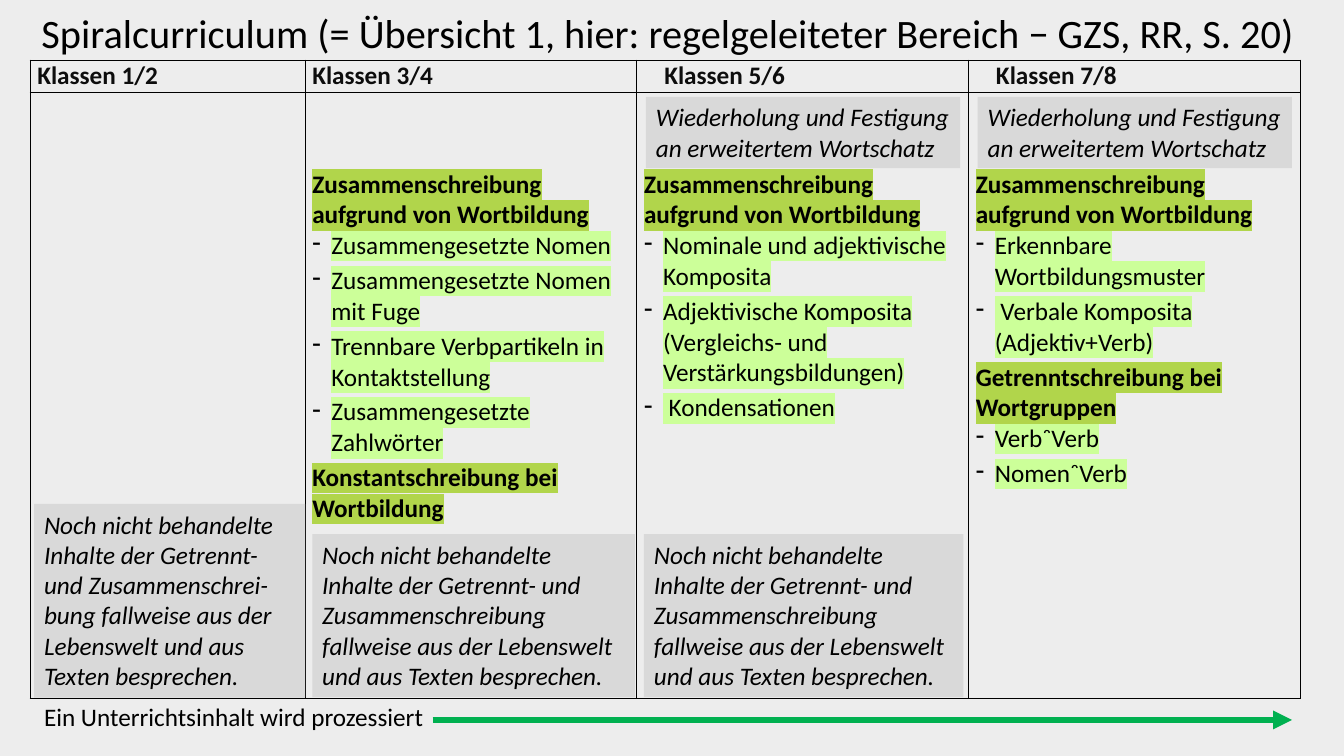
from dataclasses import dataclass

from lxml.etree import SubElement
from pptx import Presentation
from pptx.dml.color import RGBColor
from pptx.enum.shapes import MSO_CONNECTOR, MSO_SHAPE
from pptx.enum.text import MSO_ANCHOR, MSO_AUTO_SIZE, PP_ALIGN
from pptx.oxml.ns import qn
from pptx.util import Cm, Pt

FONT = "Calibri"
BLACK, HEADER_INK = "000000", "0D0D0D"
PAGE_GREY, NOTE_GREY = "EDEDED", "D9D9D9"
TOPIC_GREEN, ITEM_GREEN, ARROW_GREEN = "B1D54B", "CCFF99", "00B050"

TITLE = "Spiralcurriculum (= Übersicht 1, hier: regelgeleiteter Bereich − GZS, RR, S. 20)"
CAPTION = "Ein Unterrichtsinhalt wird prozessiert"
JOINING = "Zusammenschreibung aufgrund von Wortbildung"
REVIEW = "Wiederholung und Festigung an erweitertem Wortschatz"
PENDING = (
    "Noch nicht behandelte Inhalte der Getrennt- und {} "
    "fallweise aus der Lebenswelt und aus Texten besprechen."
)
PENDING_WIDE = PENDING.format("Zusammenschreibung")
PENDING_NARROW = PENDING.format("Zusammenschrei-bung")

PLAIN = {"size": Pt(18), "name": FONT, "bold": False, "italic": False}
BOLD = PLAIN | {"bold": True}
ITALIC = PLAIN | {"italic": True}
HEADING = PLAIN | {"size": Pt(28.8)}


@dataclass
class Topic:
    heading: str
    items: tuple[str, ...] = ()


@dataclass
class Column:
    header: str
    width: float
    header_indent: float = 0
    topics: tuple[Topic, ...] = ()


@dataclass
class Note:
    text: str
    left: float
    top: float
    width: float
    height: float


COLUMNS = (
    Column("Klassen 1/2", 6.93),
    Column("Klassen 3/4", 8.36, 0, (
        Topic(JOINING, (
            "Zusammengesetzte Nomen",
            "Zusammengesetzte Nomen mit Fuge",
            "Trennbare Verbpartikeln in Kontaktstellung",
            "Zusammengesetzte Zahlwörter",
        )),
        Topic("Konstantschreibung bei Wortbildung"),
    )),
    Column("Klassen 5/6", 8.36, 0.51, (
        Topic(JOINING, (
            "Nominale und adjektivische Komposita",
            "Adjektivische Komposita (Vergleichs- und Verstärkungsbildungen)",
            " Kondensationen",
        )),
    )),
    Column("Klassen 7/8", 8.36, 0.51, (
        Topic(JOINING, (
            "Erkennbare Wortbildungsmuster",
            " Verbale Komposita (Adjektiv+Verb)",
        )),
        Topic("Getrenntschreibung bei Wortgruppen", ("VerbᵔVerb", "NomenᵔVerb")),
    )),
)

NOTES = (
    Note(REVIEW, 24.64, 2.44, 7.92, 1.8),
    Note(PENDING_WIDE, 7.87, 13.46, 8.13, 4.11),
    Note(PENDING_NARROW, 0.86, 12.7, 6.83, 4.88),
    Note(PENDING_WIDE, 16.23, 13.46, 8.05, 4.11),
    Note(REVIEW, 16.28, 2.44, 7.92, 1.8),
)


def colour(value: str) -> RGBColor:
    return RGBColor.from_string(value)


def apply(target, values: dict) -> None:
    for name, value in values.items():
        setattr(target, name, value)


def paint(fill, value: str) -> None:
    fill.solid()
    fill.fore_color.rgb = colour(value)


def write(para, text: str, style: dict, ink: str = BLACK, marker: str = "") -> None:
    para.alignment = PP_ALIGN.LEFT
    span = para.add_run()
    span.text = text
    apply(span.font, style)
    span.font.color.rgb = colour(ink)
    if marker:
        properties = span.font._element
        highlight = SubElement(properties, qn("a:highlight"))
        SubElement(highlight, qn("a:srgbClr"), val=marker)
        properties.find(qn("a:solidFill")).addnext(highlight)


def add_dash(para) -> None:
    para.space_after = Pt(3)
    properties = para._p.get_or_add_pPr()
    properties.set("marL", str(Cm(0.48)))
    properties.set("indent", str(-Cm(0.48)))
    SubElement(properties, qn("a:buChar"), char="-")


def format_cell(cell, top: float) -> None:
    apply(cell, {
        "margin_left": Cm(0.18), "margin_right": Cm(0.18),
        "margin_top": Cm(top), "margin_bottom": 0,
    })
    cell.fill.background()
    properties = cell._tc.get_or_add_tcPr()
    for position, side in enumerate(("lnL", "lnR", "lnT", "lnB")):
        border = SubElement(properties, qn(f"a:{side}"), w=str(Pt(1)))
        fill = SubElement(border, qn("a:solidFill"))
        SubElement(fill, qn("a:srgbClr"), val=BLACK)
        properties.insert(position, border)


def fill_topics(cell, topics: tuple[Topic, ...]) -> None:
    frame = cell.text_frame
    for number, topic in enumerate(topics):
        para = frame.add_paragraph() if number else frame.paragraphs[0]
        write(para, topic.heading, BOLD, marker=TOPIC_GREEN)
        for item in topic.items:
            para = frame.add_paragraph()
            write(para, item, PLAIN, marker=ITEM_GREEN)
            add_dash(para)


def add_title(page) -> None:
    title = page.shapes.title
    apply(title, {"left": Cm(0.79), "top": Cm(-0.05), "width": Cm(32.31), "height": Cm(1.9)})
    apply(title.text_frame, {
        "word_wrap": True, "auto_size": MSO_AUTO_SIZE.NONE,
        "vertical_anchor": MSO_ANCHOR.MIDDLE,
    })
    para = title.text_frame.paragraphs[0]
    para.line_spacing = 0.9
    write(para, TITLE, HEADING)


def add_curriculum(page) -> None:
    width = sum(column.width for column in COLUMNS)
    table = page.shapes.add_table(
        2, len(COLUMNS), Cm(0.76), Cm(1.52), Cm(width), Cm(16.08)
    ).table
    apply(table, {"first_row": False, "horz_banding": False})
    for row, height in zip(table.rows, (0.81, 15.27)):
        row.height = Cm(height)
    for index, column in enumerate(COLUMNS):
        table.columns[index].width = Cm(column.width)
        header, body = table.cell(0, index), table.cell(1, index)
        format_cell(header, 0)
        format_cell(body, 1.93)
        para = header.text_frame.paragraphs[0]
        write(para, column.header, BOLD, HEADER_INK)
        para._p.get_or_add_pPr().set("marL", str(Cm(column.header_indent)))
        fill_topics(body, column.topics)


def add_note(page, note: Note) -> None:
    box = page.shapes.add_shape(
        MSO_SHAPE.RECTANGLE, Cm(note.left), Cm(note.top), Cm(note.width), Cm(note.height)
    )
    box.shadow.inherit = False
    paint(box.fill, NOTE_GREY)
    box.line.fill.background()
    apply(box.text_frame, {"word_wrap": True, "vertical_anchor": MSO_ANCHOR.TOP})
    write(box.text_frame.paragraphs[0], note.text, ITALIC)


def add_process(page) -> None:
    box = page.shapes.add_textbox(Cm(0.86), Cm(17.55), Cm(31.32), Cm(1.02))
    box.text_frame.word_wrap = True
    write(box.text_frame.paragraphs[0], CAPTION, PLAIN)
    arrow = page.shapes.add_connector(
        MSO_CONNECTOR.STRAIGHT, Cm(10.9), Cm(18.14), Cm(32.56), Cm(18.14)
    )
    arrow.line.color.rgb = colour(ARROW_GREEN)
    arrow.line.width = Pt(4.5)
    SubElement(arrow.line._get_or_add_ln(), qn("a:tailEnd"), type="triangle")
    SubElement(arrow._element.spPr, qn("a:effectLst"))


def main() -> None:
    deck = Presentation()
    apply(deck, {"slide_width": Cm(33.87), "slide_height": Cm(19.05)})
    page = deck.slides.add_slide(deck.slide_layouts.get_by_name("Title Only"))
    paint(page.background.fill, PAGE_GREY)
    add_title(page)
    add_curriculum(page)
    for note in NOTES:
        add_note(page, note)
    add_process(page)
    deck.save("out.pptx")


if __name__ == "__main__":
    main()
